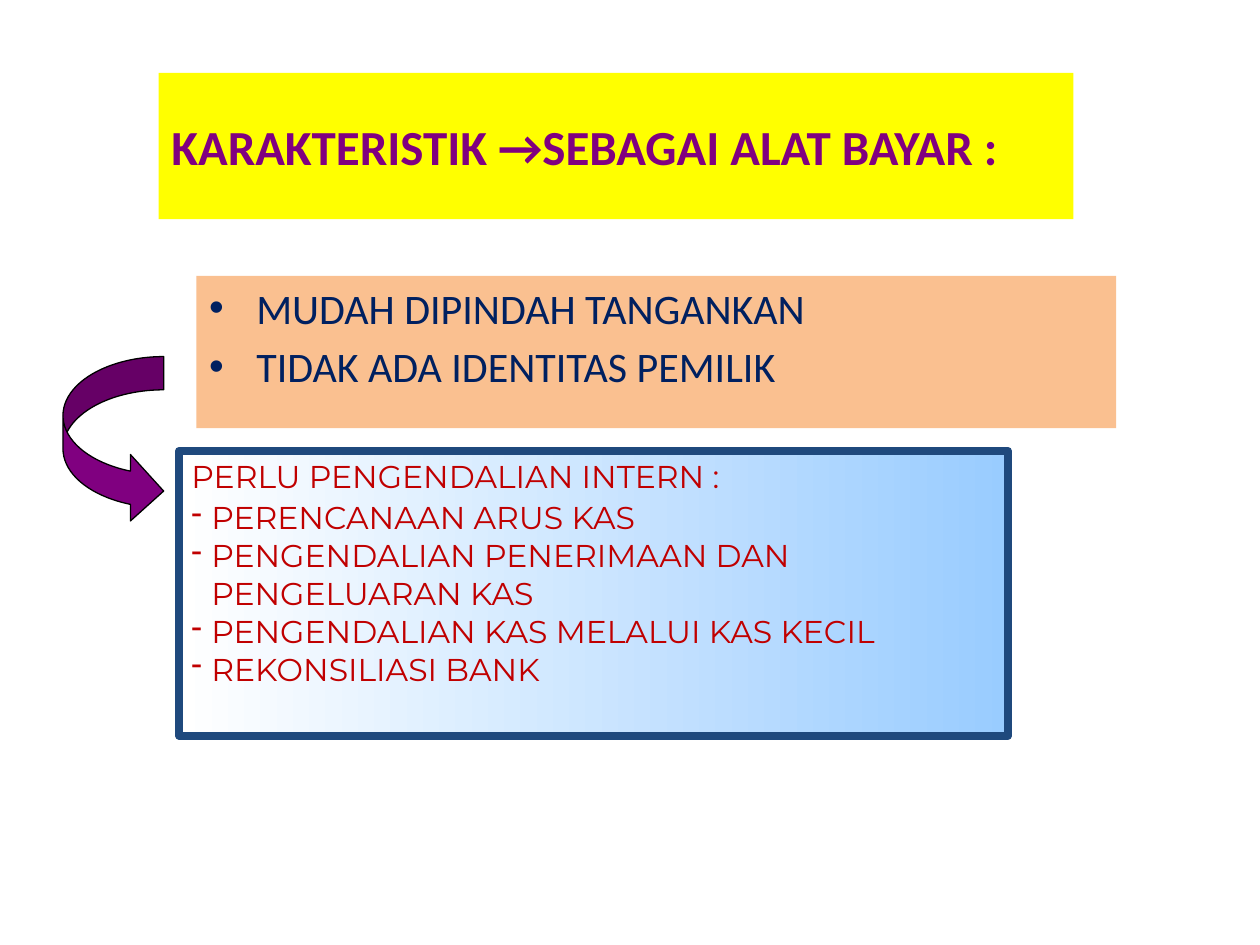
from lxml.etree import SubElement
from pptx import Presentation
from pptx.dml.color import RGBColor
from pptx.enum.shapes import MSO_SHAPE
from pptx.enum.text import MSO_ANCHOR, MSO_AUTO_SIZE, PP_ALIGN
from pptx.oxml.ns import qn
from pptx.util import Cm, Pt

TRAITS = ["MUDAH DIPINDAH TANGANKAN", "TIDAK ADA IDENTITAS PEMILIK"]
CONTROLS = [
    "PERENCANAAN ARUS KAS",
    "PENGENDALIAN PENERIMAAN DAN\vPENGELUARAN KAS",
    "PENGENDALIAN KAS MELALUI KAS KECIL",
    "REKONSILIASI BANK",
]


def color(hex_code):
    return RGBColor.from_string(hex_code)


def style(paragraph, font_name, size, hex_code, bold=False):
    paragraph.alignment = PP_ALIGN.LEFT
    font = paragraph.font
    font.name, font.size, font.bold = font_name, Pt(size), bold
    font.color.rgb = color(hex_code)


def fill_placeholder(placeholder, box, fill, lines, size, hex_code, bold=False):
    """Move a template placeholder, colour it and write one paragraph per line."""
    placeholder.left, placeholder.top, placeholder.width, placeholder.height = map(Cm, box)
    placeholder.fill.solid()
    placeholder.fill.fore_color.rgb = color(fill)
    frame = placeholder.text_frame
    frame.auto_size = MSO_AUTO_SIZE.NONE
    frame.text = "\n".join(lines)
    for paragraph in frame.paragraphs:
        style(paragraph, "Calibri", size, hex_code, bold)


def add_outlined_shape(slide, kind, box, line, width):
    shape = slide.shapes.add_shape(kind, *map(Cm, box))
    shape.shadow.inherit = False
    shape.line.color.rgb = color(line)
    shape.line.width = Pt(width)
    return shape


def hang_dash(paragraph):
    """Give the paragraph a dash bullet with a hanging indent."""
    properties = paragraph._p.get_or_add_pPr()
    properties.set("marL", str(Cm(0.4)))
    properties.set("indent", str(-Cm(0.4)))
    SubElement(properties, qn("a:buChar")).set("char", "-")


def add_curved_arrow(slide):
    arrow = add_outlined_shape(slide, MSO_SHAPE.CURVED_RIGHT_ARROW,
                               (1.27, 7.19, 2.03, 3.38), "000000", 0.75)
    arrow.fill.solid()
    arrow.fill.fore_color.rgb = color("800080")
    for index, value in enumerate((0.33, 0.66, 0.33)):
        arrow.adjustments[index] = value


def add_control_box(slide):
    box = add_outlined_shape(slide, MSO_SHAPE.RECTANGLE,
                             (3.61, 9.09, 16.71, 5.74), "1F497D", 4.5)
    box.fill.gradient()
    box.fill.gradient_angle = 0
    for stop, hex_code in zip(box.fill.gradient_stops, ("FFFFFF", "99CCFF")):
        stop.color.rgb = color(hex_code)

    frame = box.text_frame
    frame.word_wrap = True
    frame.vertical_anchor = MSO_ANCHOR.TOP
    heading = frame.paragraphs[0]
    heading.text = "PERLU PENGENDALIAN INTERN :"
    style(heading, "Montserrat", 18, "C00000")
    for index, control in enumerate(CONTROLS):
        item = frame.add_paragraph()
        item.text = control
        style(item, "Montserrat", 18, "C00000")
        item.space_before = Pt(0 if index else 2)
        hang_dash(item)


def main():
    deck = Presentation()
    deck.slide_width, deck.slide_height = Cm(25.4), Cm(19.05)
    slide = deck.slides.add_slide(deck.slide_layouts[1])

    # Title and characteristics
    fill_placeholder(slide.shapes.title, (3.2, 1.47, 18.44, 2.95), "FFFF00",
                     ["KARAKTERISTIK →SEBAGAI ALAT BAYAR :"], 28, "800080", bold=True)
    fill_placeholder(slide.placeholders[1], (3.96, 5.56, 18.54, 3.07), "FAC090",
                     TRAITS, 24, "002060")

    # Consequence: the controls needed
    add_curved_arrow(slide)
    add_control_box(slide)

    deck.save("out.pptx")


if __name__ == "__main__":
    main()
